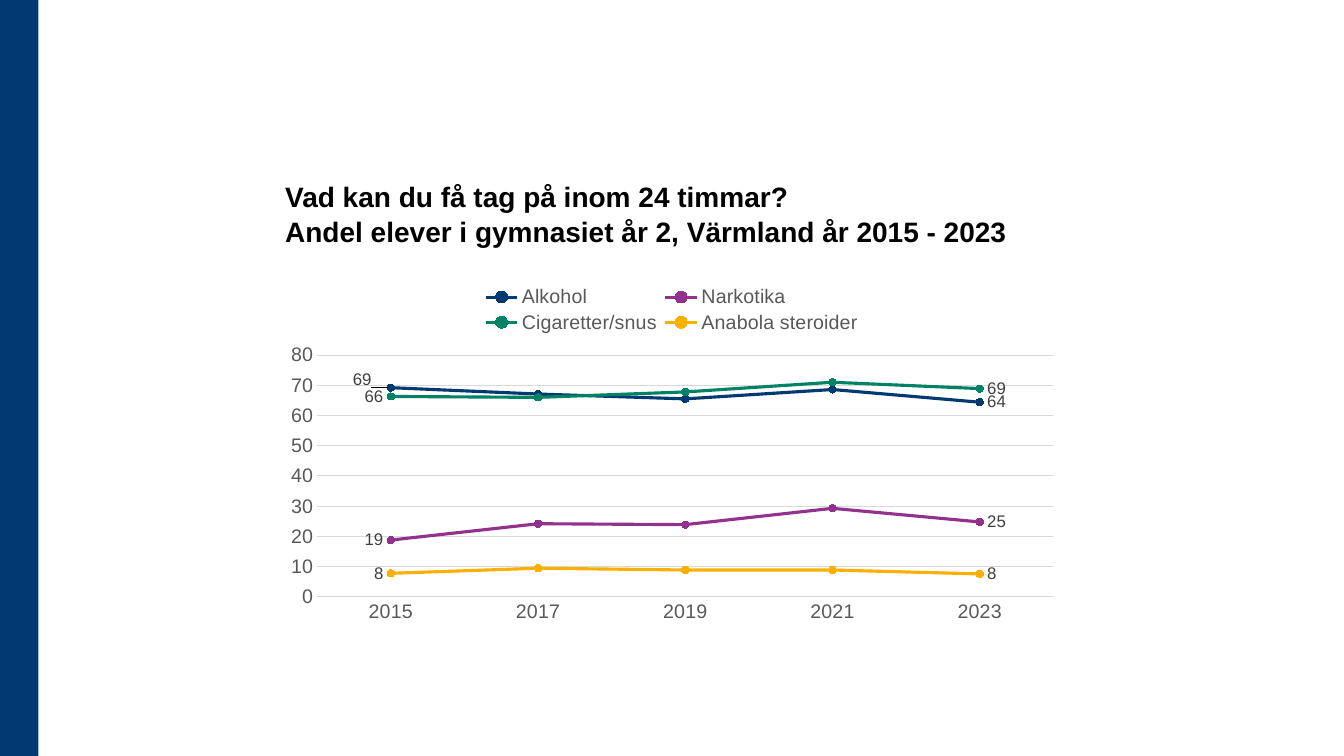
from lxml.etree import SubElement
from pptx import Presentation
from pptx.chart.data import CategoryChartData
from pptx.dml.color import RGBColor
from pptx.enum.chart import (XL_CHART_TYPE, XL_LABEL_POSITION, XL_LEGEND_POSITION,
                             XL_MARKER_STYLE, XL_TICK_MARK)
from pptx.enum.shapes import MSO_SHAPE
from pptx.enum.text import MSO_ANCHOR
from pptx.oxml.ns import qn
from pptx.util import Pt

COLORS = {
    "band": "003A70",
    "title": "000000",
    "axis_text": "595959",
    "label": "404040",
    "grid": "D9D9D9",
    "Alkohol": "003A70",
    "Narkotika": "93328E",
    "Cigaretter/snus": "008264",
    "Anabola steroider": "F9B000",
}
FONT = "Arial"
YEARS = ["2015", "2017", "2019", "2021", "2023"]
SHARES = {
    "Alkohol": [69.2, 67.1, 65.5, 68.6, 64.4],
    "Narkotika": [18.8, 24.2, 23.9, 29.3, 24.8],
    "Cigaretter/snus": [66.3, 66, 67.8, 71, 68.9],
    "Anabola steroider": [7.8, 9.5, 8.9, 8.9, 7.6],
}
TITLE = ("Vad kan du få tag på inom 24 timmar? \v"
         "Andel elever i gymnasiet år 2, Värmland år 2015 - 2023")


def color(name):
    return RGBColor.from_string(COLORS[name])


def style_font(font, size, color_name, bold=False):
    font.name = FONT
    font.size = Pt(size)
    font.bold = bold
    font.color.rgb = color(color_name)


def set_layout(parent, index, **settings):
    """Give a chart element a manual layout, in percent of the chart."""
    for old in parent.findall(qn("c:layout")):
        parent.remove(old)
    layout = SubElement(parent, qn("c:layout"))
    parent.insert(index, layout)
    manual = SubElement(layout, qn("c:manualLayout"))
    for tag, value in settings.items():
        setting = value if isinstance(value, str) else str(value / 100)
        SubElement(manual, qn(f"c:{tag}")).set("val", setting)


def add_side_band(slide, left, top, width, height):
    band = slide.shapes.add_shape(MSO_SHAPE.RECTANGLE, Pt(left), Pt(top), Pt(width), Pt(height))
    band.shadow.inherit = False
    band.fill.solid()
    band.fill.fore_color.rgb = color("band")
    band.line.fill.background()


def add_title(slide, left, top, width, height):
    frame = slide.shapes.add_textbox(Pt(left), Pt(top), Pt(width), Pt(height)).text_frame
    frame.word_wrap = True
    frame.vertical_anchor = MSO_ANCHOR.BOTTOM
    heading = frame.paragraphs[0]
    heading.text = TITLE
    heading.line_spacing = 1.05
    for run in heading.runs:
        style_font(run.font, 20, "title", bold=True)


def style_axes(chart):
    years, shares = chart.category_axis, chart.value_axis
    for axis in (years, shares):
        axis.major_tick_mark = axis.minor_tick_mark = XL_TICK_MARK.NONE
        style_font(axis.tick_labels.font, 14, "axis_text")
    shares.minimum_scale, shares.maximum_scale, shares.major_unit = 0, 80, 10
    shares.tick_labels.number_format = "0"
    shares.tick_labels.number_format_is_linked = False
    shares.format.line.fill.background()
    for line in (years.format.line, shares.major_gridlines.format.line):
        line.color.rgb = color("grid")
        line.width = Pt(0.75)


def style_series(series):
    series.smooth = False
    series.format.line.color.rgb = color(series.name)
    series.format.line.width = Pt(2.25)
    marker = series.marker
    marker.style = XL_MARKER_STYLE.CIRCLE
    marker.size = 5
    marker.format.fill.solid()
    marker.format.fill.fore_color.rgb = color(series.name)
    marker.format.line.color.rgb = color(series.name)
    series.data_labels.show_value = False
    ends = {0: XL_LABEL_POSITION.LEFT, len(YEARS) - 1: XL_LABEL_POSITION.RIGHT}
    for index, side in ends.items():
        label = series.points[index].data_label
        style_font(label.font, 12, "label")
        label.position = side


def add_share_chart(slide, left, top, width, height):
    data = CategoryChartData(number_format="0")
    data.categories = YEARS
    for substance, shares in SHARES.items():
        data.add_series(substance, shares)
    chart = slide.shapes.add_chart(XL_CHART_TYPE.LINE_MARKERS, Pt(left), Pt(top),
                                   Pt(width), Pt(height), data).chart
    style_font(chart.font, 14, "title")
    chart.has_title = False
    chart.has_legend = True
    chart.legend.position = XL_LEGEND_POSITION.TOP
    chart.legend.include_in_layout = False
    style_font(chart.legend.font, 14, "axis_text")
    style_axes(chart)
    plot = chart.plots[0]
    plot.vary_by_categories = False
    for series in plot.series:
        style_series(series)

    root = chart.element
    set_layout(root.find(".//" + qn("c:plotArea")), 0, layoutTarget="inner",
               xMode="edge", yMode="edge", x=5.3, y=22.7, w=92.8, h=67.8)
    set_layout(root.find(".//" + qn("c:legend")), 1,
               xMode="edge", yMode="edge", x=25.5, y=2.5, w=49, h=15)
    # Lift the first alcohol label clear of the cigarette label below it
    set_layout(root.find(".//" + qn("c:dLbl")), 1, x=-1.5, y=-2.2)


def main():
    presentation = Presentation()
    presentation.slide_width, presentation.slide_height = Pt(960), Pt(540)
    slide = presentation.slides.add_slide(presentation.slide_layouts[6])
    add_side_band(slide, 0, 0, 27.4, 540)
    add_title(slide, 196.6, 76.3, 566.6, 104.4)
    add_share_chart(slide, 196.6, 195.8, 566.6, 254.9)
    presentation.save("out.pptx")


if __name__ == "__main__":
    main()
